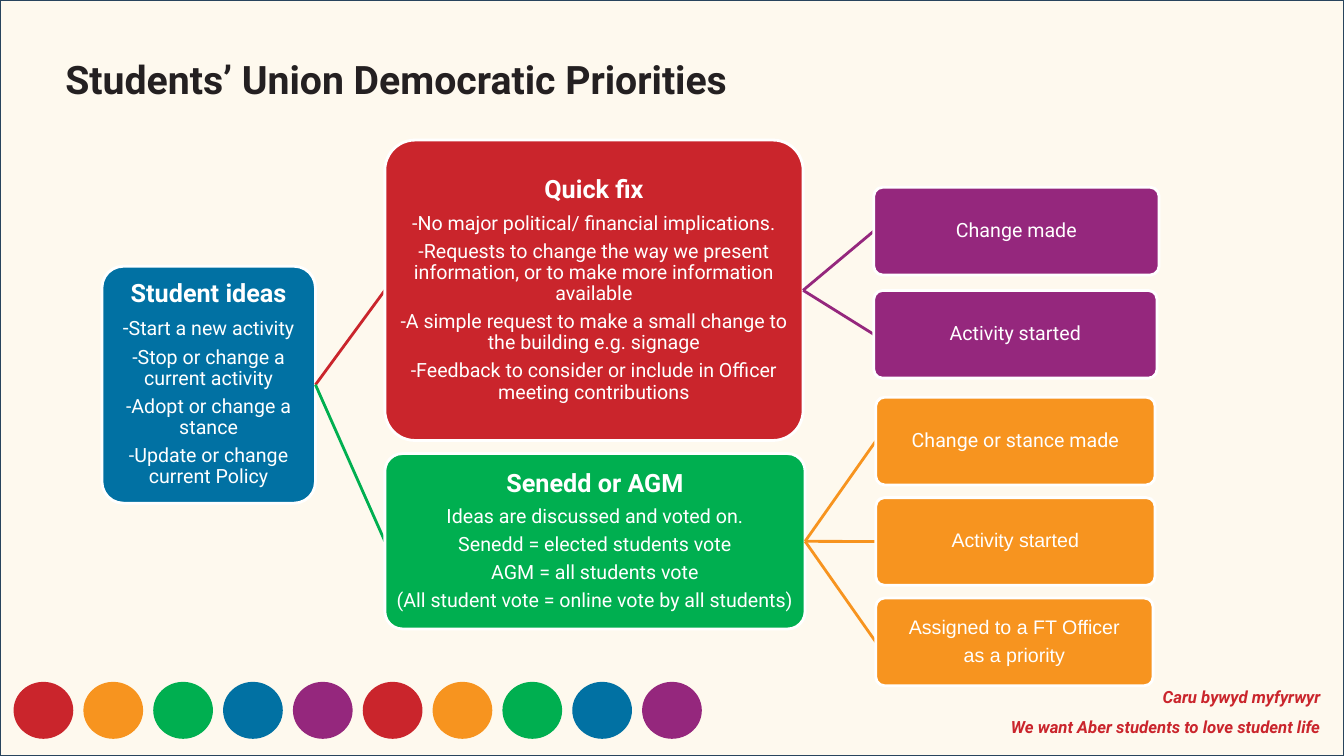
from lxml.etree import SubElement
from pptx import Presentation
from pptx.dml.color import RGBColor
from pptx.enum.shapes import MSO_CONNECTOR, MSO_SHAPE
from pptx.enum.text import MSO_ANCHOR, PP_ALIGN
from pptx.oxml.ns import qn
from pptx.util import Cm, Pt

COLORS = {
    "red": "CA252C", "orange": "F7941F", "green": "00AF50",
    "blue": "0171A3", "purple": "95277D", "white": "FFFFFF",
    "ink": "242021", "cream": "FEEECE", "navy": "28445D",
}
WIDTH, HEIGHT = 33.87, 19.05


def rgb(name):
    return RGBColor.from_string(COLORS[name])


class Deck:
    font = "Roboto"
    line_width = 2

    def __init__(self):
        self.prs = Presentation()
        self.prs.slide_width = Cm(WIDTH)
        self.prs.slide_height = Cm(HEIGHT)
        self.s = self.prs.slides.add_slide(self.prs.slide_layouts[6])

    def shape(self, kind, at, fill, line, width=line_width):
        sp = self.s.shapes.add_shape(kind, *map(Cm, at))
        sp.shadow.inherit = False
        sp.fill.solid()
        sp.fill.fore_color.rgb = rgb(fill)
        sp.line.color.rgb = rgb(line)
        sp.line.width = Pt(width)
        return sp

    def backdrop(self, fill, line, opacity):
        sp = self.shape(MSO_SHAPE.RECTANGLE, (0, 0, WIDTH, HEIGHT), fill, line)
        color = sp.fill._xPr.find(f"{qn('a:solidFill')}/{qn('a:srgbClr')}")
        SubElement(color, qn("a:alpha")).set("val", str(opacity * 1000))

    def run(self, p, text, size, color, bold=False, italic=False, font=None):
        r = p.add_run()
        r.text = text
        r.font.name = font or self.font
        r.font.size = Pt(size)
        r.font.bold = bold
        r.font.italic = italic
        r.font.color.rgb = rgb(color)

    def text(self, at, lines, size, color, align=PP_ALIGN.LEFT, spacing=1, italic=False):
        tf = self.s.shapes.add_textbox(*map(Cm, at)).text_frame
        tf.word_wrap = True
        for i, line in enumerate(lines):
            p = tf.add_paragraph() if i else tf.paragraphs[0]
            p.alignment = align
            p.line_spacing = spacing
            self.run(p, line, size, color, True, italic)

    def box(self, at, fill, lines, font=None):
        sp = self.shape(MSO_SHAPE.ROUNDED_RECTANGLE, at, fill, "white")
        sp.adjustments[0] = 0.1
        tf = sp.text_frame
        tf.word_wrap = True
        tf.vertical_anchor = MSO_ANCHOR.MIDDLE
        tf.margin_left = tf.margin_right = tf.margin_top = tf.margin_bottom = Cm(0.03)
        for i, runs in enumerate(lines):
            p = tf.add_paragraph() if i else tf.paragraphs[0]
            p.alignment = PP_ALIGN.CENTER
            p.line_spacing = 0.9
            p.space_after = Pt(0.35 * max(size for _, size, _ in runs))
            for text, size, bold in runs:
                self.run(p, text, size, "white", bold, font=font)
        return sp

    def link(self, parent, at, color):
        left, top, _, height = at
        c = self.s.shapes.add_connector(
            MSO_CONNECTOR.STRAIGHT,
            parent.left + parent.width, parent.top + parent.height // 2,
            Cm(left), Cm(top + height / 2))
        c.line.color.rgb = rgb(color)
        c.line.width = Pt(self.line_width)
        SubElement(c._element.spPr, qn("a:effectLst"))

    def child(self, parent, at, color, lines, font=None):
        self.link(parent, at, color)
        return self.box(at, color, lines, font)

    def dots(self, names, count, left, top, pitch, width, height):
        for i in range(count):
            color = names[i % len(names)]
            self.shape(MSO_SHAPE.OVAL, (left + i * pitch, top, width, height), color, color, 1)


def heading(text):
    return [(text, 18, True)]


def body(*lines):
    return [[(line, 14, False)] for line in lines]


def main():
    deck = Deck()
    deck.backdrop("cream", "navy", 33)
    deck.text((16.94, 16.92, 16.59, 1.7),
              ["Caru bywyd myfyrwyr", "We want Aber students to love student life"],
              12, "red", PP_ALIGN.RIGHT, 1.5, True)
    deck.dots(["red", "orange", "green", "blue", "purple"], 10, 0.36, 17.2, 1.76, 1.47, 1.4)
    deck.text((1.4, 1.27, 31.12, 1.44), ["Students’ Union Democratic Priorities"], 28, "ink")

    ideas = deck.box((2.57, 6.71, 5.38, 5.97), "blue", [
        heading("Student ideas"),
        [("-", 15, False), ("Start a new activity", 14, False)],
        *body("-Stop or change a current activity",
              "-Adopt or change a stance",
              "-Update or change current Policy"),
    ])
    quick_fix = deck.child(ideas, (9.7, 3.53, 10.54, 7.57), "red", [
        heading("Quick fix"),
        *body("-No major political/ financial implications.",
              "-Requests to change the way we present information, or to make more information available",
              "-A simple request to make a small change to the building e.g. signage",
              "-Feedback to consider or include in Officer meeting contributions"),
    ])
    senedd = deck.child(ideas, (9.7, 11.43, 10.59, 4.42), "green", [
        heading("Senedd or AGM"),
        *body("Ideas are discussed and voted on.",
              "Senedd = elected students vote",
              "AGM = all students vote",
              "(All student vote = online vote by all students)"),
    ])

    fix_outcomes = [(7.19, "Change made"), (7.14, "Activity started")]
    for i, (width, label) in enumerate(fix_outcomes):
        deck.child(quick_fix, (22.02, 4.72 + i * 2.6, width, 2.21), "purple", body(label))

    vote_outcomes = [
        (7.04, ["Change or stance made"], "Roboto"),
        (7.04, ["Activity started"], "Arial"),
        (6.99, ["Assigned to a FT Officer", "as a priority"], "Arial"),
    ]
    for i, (width, labels, font) in enumerate(vote_outcomes):
        deck.child(senedd, (22.07, 10.01 + i * 2.53, width, 2.21), "orange", body(*labels), font)

    deck.prs.save("out.pptx")


if __name__ == "__main__":
    main()
